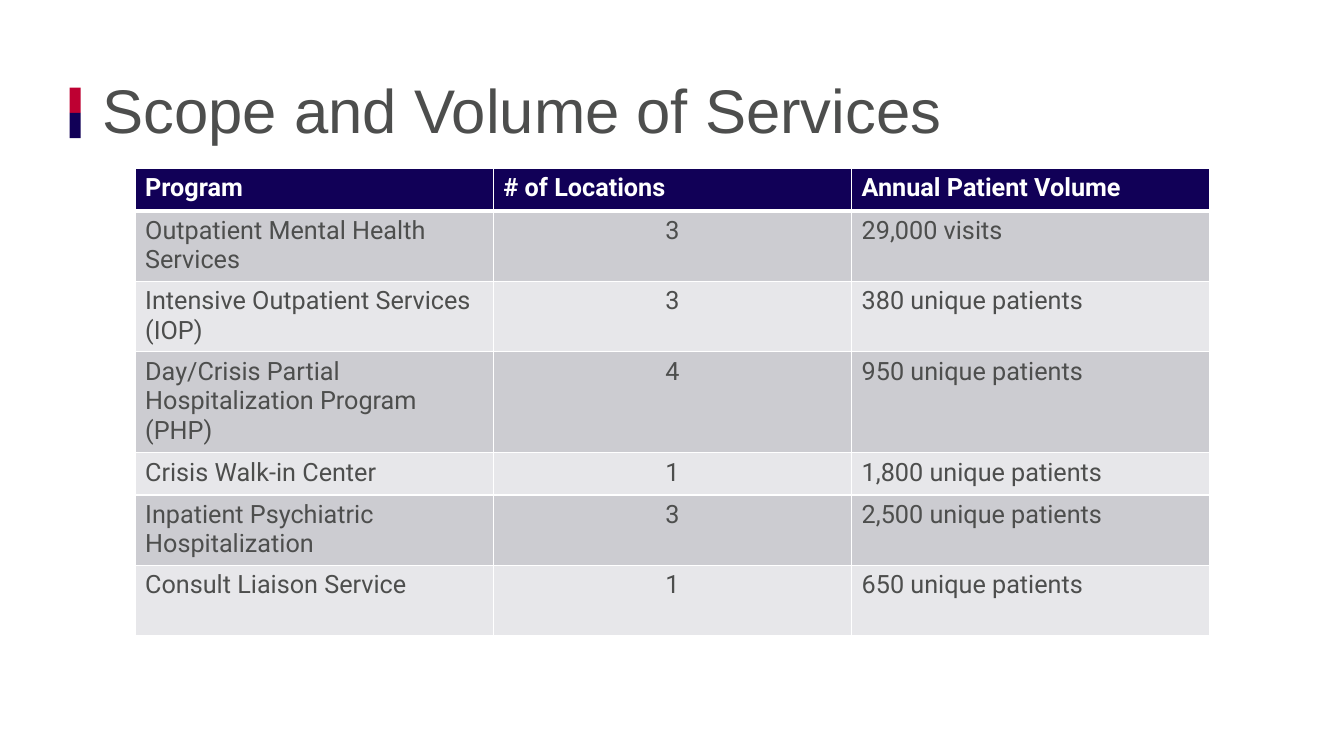
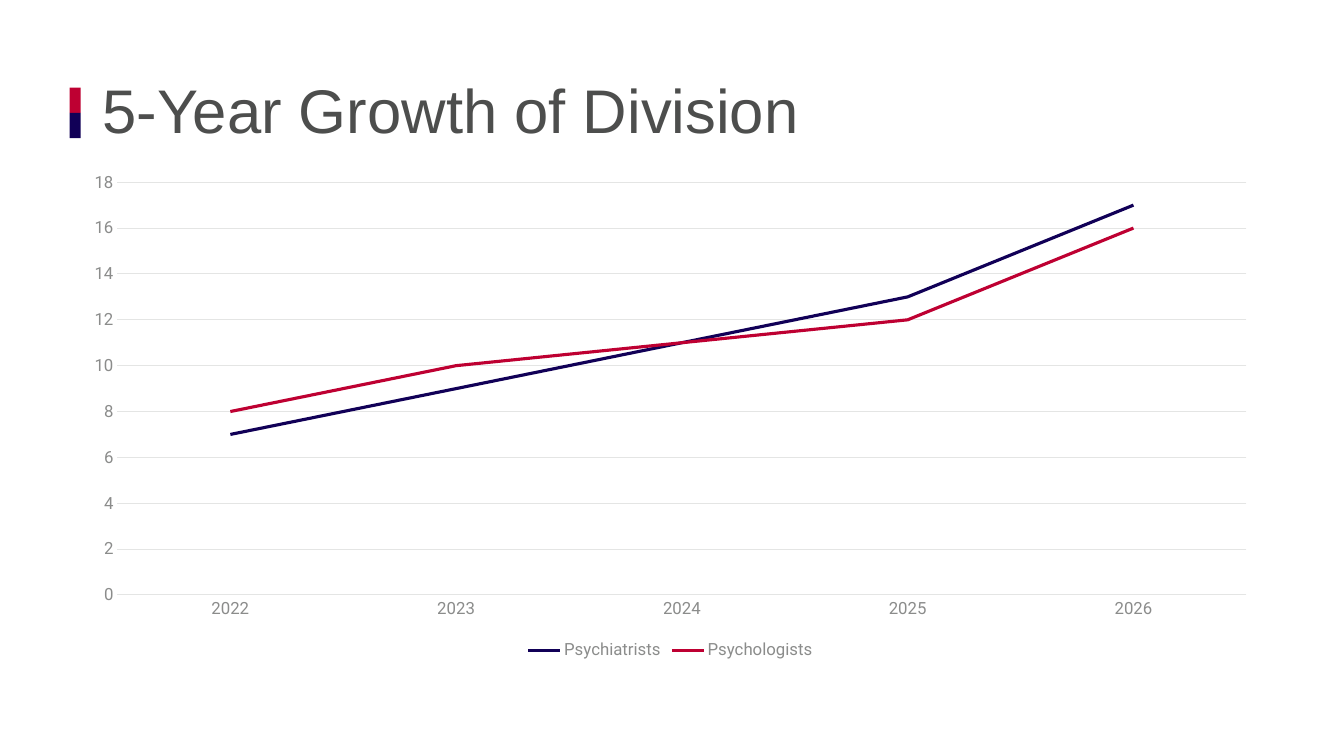
"""Build two slides on the services and growth of a behavioural health division."""
from dataclasses import dataclass

from lxml import etree
from pptx import Presentation
from pptx import util as u
from pptx.chart import data as chart_data
from pptx.dml.color import RGBColor
from pptx.enum import chart as charts, shapes, text
from pptx.oxml import ns


@dataclass(frozen=True)
class Theme:
    """Colours, fonts and type sizes of the deck."""
    red: str = "BE0032"
    navy: str = "110057"
    ink: str = "4D4E4D"
    muted: str = "8B8C8B"
    rule: str = "E4E5E4"
    white: str = "FFFFFF"
    bands: tuple = ("CCCCD1", "E7E7EA")
    title_font: str = "Arial"
    body_font: str = "Roboto"
    title_size: int = 44
    table_size: int = 18
    chart_size: int = 12


THEME = Theme()

PROGRAMS = (
    ("Program", "# of Locations", "Annual Patient Volume"),
    ("Outpatient Mental Health Services", "3", "29,000 visits"),
    ("Intensive Outpatient Services (IOP)", "3", "380 unique patients"),
    ("Day/Crisis Partial Hospitalization Program (PHP)", "4", "950 unique patients"),
    ("Crisis Walk-in Center", "1", "1,800 unique patients"),
    ("Inpatient Psychiatric Hospitalization", "3", "2,500 unique patients"),
    ("Consult Liaison Service", "1", "650 unique patients"),
)
ROW_HEIGHTS = (0.42, 0.69, 0.69, 0.98, 0.42, 0.69, 0.69)

YEARS = ("2022", "2023", "2024", "2025", "2026")
STAFF = (
    ("Psychiatrists", (7, 9, 11, 13, 17), THEME.navy),
    ("Psychologists", (8, 10, 11, 12, 16), THEME.red),
)


def rgb(colour):
    """Return the colour object for a hex string."""
    return RGBColor.from_string(colour)


def box(left, top, width, height):
    """Return a position and size given in inches."""
    return [u.Inches(length) for length in (left, top, width, height)]


def style_font(font, *, size, colour, face=THEME.body_font, bold=False):
    """Apply face, size, colour and weight to a font."""
    font.name = face
    font.size = u.Pt(size)
    font.bold = bold
    font.color.rgb = rgb(colour)


def write(frame, words, *, align=text.PP_ALIGN.LEFT, spacing=None, **style):
    """Write one formatted paragraph into a text frame."""
    paragraph = frame.paragraphs[0]
    paragraph.alignment = align
    if spacing:
        paragraph.line_spacing = spacing
    run = paragraph.add_run()
    run.text = words
    style_font(run.font, **style)


def add_block(slide, place, colour):
    """Add a plain filled rectangle."""
    block = slide.shapes.add_shape(shapes.MSO_SHAPE.RECTANGLE, *place)
    block.shadow.inherit = False
    block.fill.solid()
    block.fill.fore_color.rgb = rgb(colour)
    block.line.fill.background()


def add_titled_slide(deck, title):
    """Add a blank slide with the two-colour marker and its title."""
    slide = deck.slides.add_slide(deck.slide_layouts[6])
    for index, colour in enumerate((THEME.red, THEME.navy)):
        add_block(slide, box(0.69, 0.87 + index * 0.25, 0.11, 0.25), colour)
    frame = slide.shapes.add_textbox(*box(0.92, 0.4, 11.5, 1.45)).text_frame
    frame.word_wrap = True
    frame.vertical_anchor = text.MSO_ANCHOR.MIDDLE
    write(frame, title, spacing=0.9, size=THEME.title_size,
          colour=THEME.ink, face=THEME.title_font)
    return slide


def set_borders(cell, **widths):
    """Draw white cell borders with point widths keyed by side."""
    properties = cell._tc.get_or_add_tcPr()
    for side in "LRTB":
        line = etree.SubElement(properties, ns.qn(f"a:ln{side}"),
                                w=str(u.Pt(widths.get(side, 1))))
        fill = etree.SubElement(line, ns.qn("a:solidFill"))
        etree.SubElement(fill, ns.qn("a:srgbClr"), val=THEME.white)


def add_program_table(slide):
    """Add the banded table of programs."""
    place = box(1.34, 1.67, 10.66, sum(ROW_HEIGHTS))
    table = slide.shapes.add_table(len(PROGRAMS), len(PROGRAMS[0]), *place).table
    for row, height in zip(table.rows, ROW_HEIGHTS):
        row.height = u.Inches(height)
    for r, entries in enumerate(PROGRAMS):
        header = r == 0
        fill = THEME.navy if header else THEME.bands[(r - 1) % 2]
        for c, words in enumerate(entries):
            cell = table.cell(r, c)
            set_borders(cell, T=3 if r == 1 else 1, B=3 if header else 1)
            cell.fill.solid()
            cell.fill.fore_color.rgb = rgb(fill)
            centred = c == 1 and not header
            write(cell.text_frame, words, size=THEME.table_size, bold=header,
                  colour=THEME.white if header else THEME.ink,
                  align=text.PP_ALIGN.CENTER if centred else text.PP_ALIGN.LEFT)


def style_axis(axis):
    """Apply the shared tick and label style to an axis."""
    axis.major_tick_mark = axis.minor_tick_mark = charts.XL_TICK_MARK.NONE
    style_font(axis.tick_labels.font, size=THEME.chart_size, colour=THEME.muted)


def style_rule(line, colour=THEME.rule, width=0.75):
    """Set the colour and point width of a line."""
    line.color.rgb = rgb(colour)
    line.width = u.Pt(width)


def add_growth_chart(slide):
    """Add the line chart of staff by year."""
    growth = chart_data.CategoryChartData()
    growth.categories = YEARS
    for name, counts, _ in STAFF:
        growth.add_series(name, counts)
    chart = slide.shapes.add_chart(charts.XL_CHART_TYPE.LINE,
                                   *box(0.7, 1.61, 11.9, 4.98), growth).chart
    style_font(chart.font, size=THEME.chart_size, colour=THEME.ink)
    chart.has_title = False
    chart.has_legend = True
    chart.legend.position = charts.XL_LEGEND_POSITION.BOTTOM
    chart.legend.include_in_layout = False
    style_font(chart.legend.font, size=THEME.chart_size, colour=THEME.muted)

    years, counts = chart.category_axis, chart.value_axis
    style_axis(years)
    style_rule(years.format.line)
    style_axis(counts)
    counts.format.line.fill.background()
    style_rule(counts.major_gridlines.format.line)
    counts.minimum_scale, counts.maximum_scale, counts.major_unit = 0, 18, 2

    plot = chart.plots[0]
    plot.vary_by_categories = False
    for series, (_, _, colour) in zip(plot.series, STAFF):
        series.smooth = False
        series.marker.style = charts.XL_MARKER_STYLE.NONE
        style_rule(series.format.line, colour, 2.25)


def main():
    """Build and save the deck."""
    deck = Presentation()
    deck.slide_width, deck.slide_height = u.Inches(13.33), u.Inches(7.5)
    add_program_table(add_titled_slide(deck, "Scope and Volume of Services"))
    add_growth_chart(add_titled_slide(deck, "5-Year Growth of Division"))
    deck.save("out.pptx")


if __name__ == "__main__":
    main()
